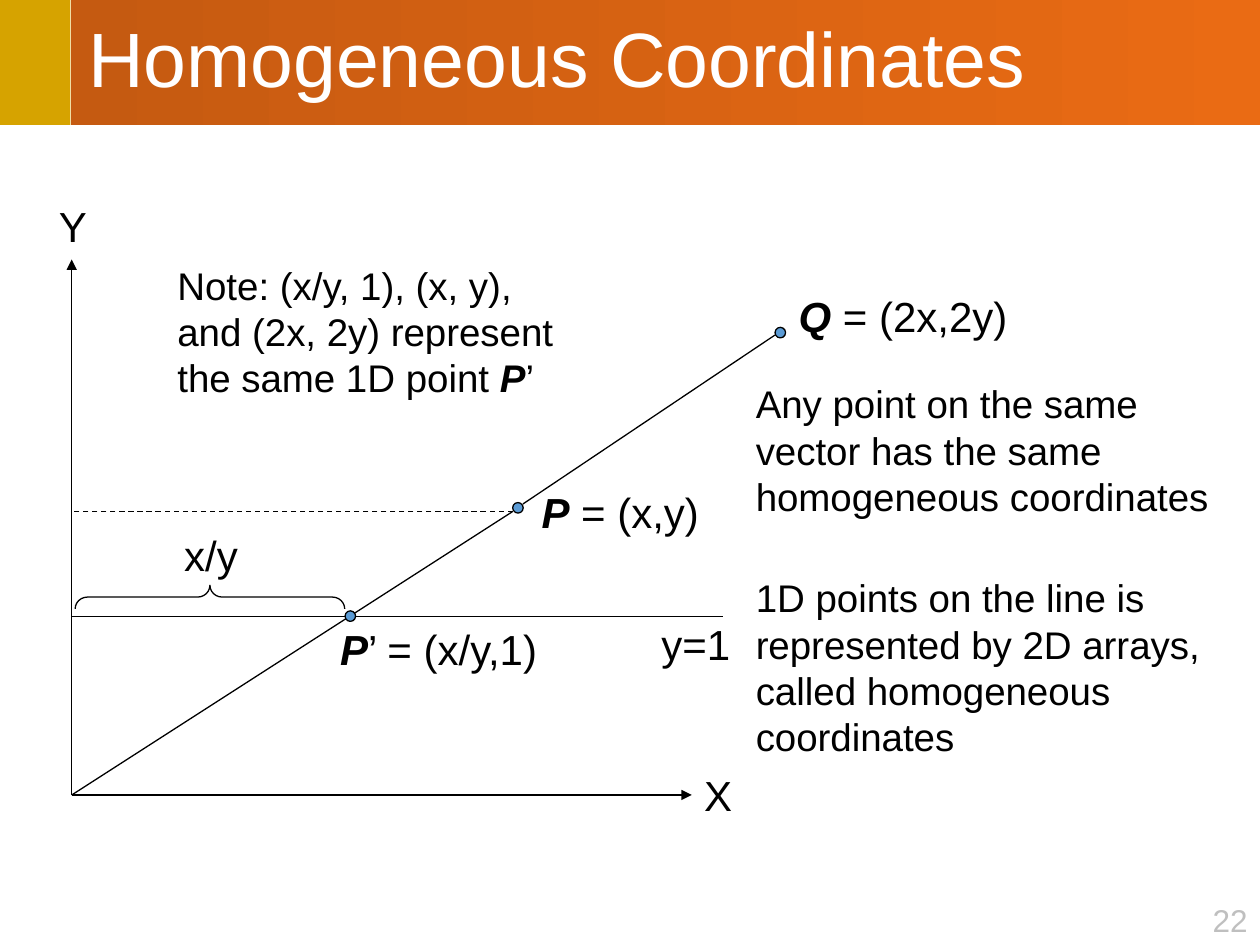
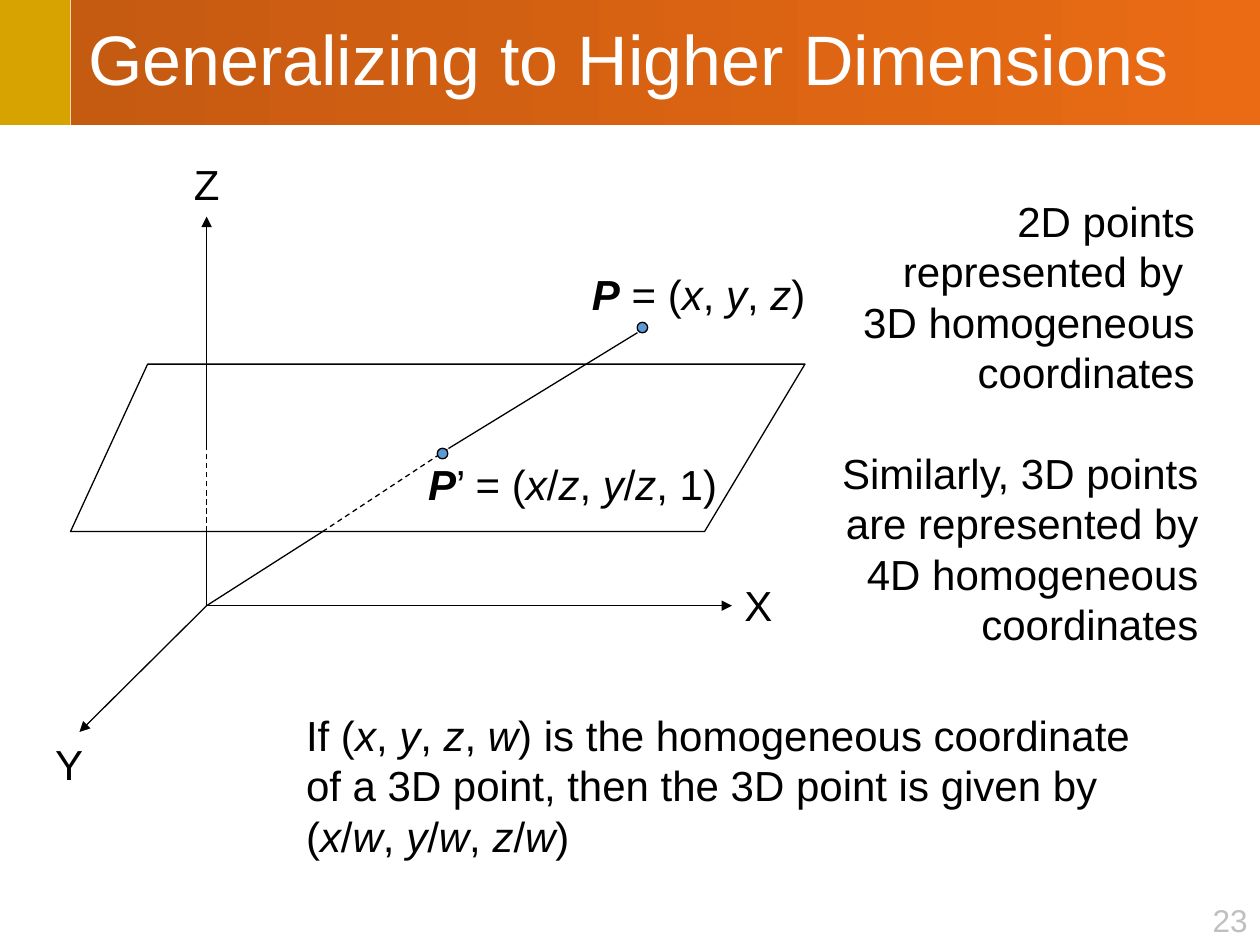
import pptx
import pptx.dml.color
import pptx.enum.dml
import pptx.enum.shapes
import pptx.enum.text
import pptx.oxml
import pptx.util

Pt = pptx.util.Pt
ALIGN = pptx.enum.text.PP_ALIGN
SHAPE = pptx.enum.shapes.MSO_SHAPE

FONT = "Arial"
COLORS = {
    "ink": "000000",
    "title": "FFFFFF",
    "corner": "D6A300",
    "band_start": "C55A11",
    "band_end": "EA6B14",
    "point": "5B9BD5",
    "number": "BFBFBF",
}
PAGE_WIDTH, PAGE_HEIGHT = 720, 540
BAND_LEFT, BAND_HEIGHT = 40.3, 71.4
LINE_WIDTH = 0.75
POINT_SIZE = 6
LABEL_HEIGHT = 36


def color(name):
    return pptx.dml.color.RGBColor.from_string(COLORS[name])


def style_font(font, size, color_name, bold=False, italic=False):
    font.name, font.size = FONT, Pt(size)
    font.bold, font.italic = bold, italic
    font.color.rgb = color(color_name)


def style_outline(shape, fill=None):
    """Thin black outline, with a plain fill or none."""
    shape.shadow.inherit = False
    shape.line.color.rgb = color("ink")
    shape.line.width = Pt(LINE_WIDTH)
    if fill:
        shape.fill.solid()
        shape.fill.fore_color.rgb = color(fill)
    else:
        shape.fill.background()


def add_text(page, text, left, top, width, height=LABEL_HEIGHT, *, size=24,
             align=ALIGN.LEFT, wrap=False, color_name="ink"):
    """Symbols stand between asterisks: italic, and bold too for capital vectors."""
    box = page.shapes.add_textbox(Pt(left), Pt(top), Pt(width), Pt(height))
    frame = box.text_frame
    frame.word_wrap = wrap
    frame.auto_size = pptx.enum.text.MSO_AUTO_SIZE.SHAPE_TO_FIT_TEXT
    para = frame.paragraphs[0]
    para.alignment = align
    for line_index, line in enumerate(text.split("\n")):
        if line_index:
            para.add_line_break()
        for index, part in enumerate(line.split("*")):
            if part:
                symbol = index % 2 == 1
                span = para.add_run()
                span.text = part
                style_font(span.font, size, color_name,
                           bold=symbol and part.isupper(), italic=symbol)


def add_line(page, start, end, *, dashed=False, arrow=False):
    line = page.shapes.add_connector(
        pptx.enum.shapes.MSO_CONNECTOR.STRAIGHT,
        *(Pt(value) for value in (*start, *end)))
    line.line.color.rgb = color("ink")
    line.line.width = Pt(LINE_WIDTH)
    if dashed:
        line.line.dash_style = pptx.enum.dml.MSO_LINE.DASH
    namespace = pptx.oxml.ns.nsdecls("a")
    if arrow:
        line.line._get_or_add_ln().append(
            pptx.oxml.parse_xml(f'<a:tailEnd {namespace} type="triangle"/>'))
    line._element.spPr.append(pptx.oxml.parse_xml(f"<a:effectLst {namespace}/>"))


def add_point(page, center_x, center_y):
    dot = page.shapes.add_shape(
        SHAPE.OVAL, Pt(center_x - POINT_SIZE / 2), Pt(center_y - POINT_SIZE / 2),
        Pt(POINT_SIZE), Pt(POINT_SIZE))
    style_outline(dot, "point")


def add_brace(page, left, top, width, height):
    """Left brace turned to open downwards; the box is given before turning."""
    brace = page.shapes.add_shape(
        SHAPE.LEFT_BRACE, Pt(left), Pt(top), Pt(width), Pt(height))
    brace.rotation = 90
    brace.adjustments[0] = 0.52
    style_outline(brace)


def add_plane(page, corners):
    corners = [(Pt(x), Pt(y)) for x, y in corners]
    builder = page.shapes.build_freeform(*corners[0])
    builder.add_line_segments(corners[1:], close=True)
    style_outline(builder.convert_to_shape())


def add_page(deck, title, number, title_size):
    """Page with the corner block, the gradient title band and the number."""
    page = deck.slides.add_slide(deck.slide_layouts[5])
    corner = page.shapes.add_shape(SHAPE.RECTANGLE, 0, 0, Pt(BAND_LEFT), Pt(BAND_HEIGHT))
    corner.shadow.inherit = False
    corner.fill.solid()
    corner.fill.fore_color.rgb = color("corner")
    corner.line.fill.background()

    band = page.shapes.title
    band.left, band.top = Pt(BAND_LEFT), Pt(0)
    band.width, band.height = Pt(PAGE_WIDTH - BAND_LEFT), Pt(BAND_HEIGHT)
    band.fill.gradient()
    band.fill.gradient_angle = 0
    for stop, name in zip(band.fill.gradient_stops, ("band_start", "band_end")):
        stop.color.rgb = color(name)
    frame = band.text_frame
    frame.text = title
    frame.margin_left = Pt(10)
    frame.word_wrap = True
    frame.auto_size = pptx.enum.text.MSO_AUTO_SIZE.NONE
    frame.vertical_anchor = pptx.enum.text.MSO_ANCHOR.MIDDLE
    para = frame.paragraphs[0]
    para.alignment = ALIGN.LEFT
    para.line_spacing = 0.9
    style_font(para.runs[0].font, title_size, "title")

    add_text(page, str(number), 683.3, 511.2, 36.7, 28.8, size=18,
             align=ALIGN.RIGHT, color_name="number")
    return page


def build_homogeneous(deck):
    page = add_page(deck, "Homogeneous Coordinates", 22, 44)
    origin_x, origin_y = origin = (41, 454.3)
    unit_y = 352.1
    vector_end = (293, 292.3)

    # Axes and the line y = 1
    add_line(page, origin, (origin_x, 148.3), arrow=True)
    add_line(page, origin, (395.3, origin_y), arrow=True)
    add_line(page, (origin_x, unit_y), (413.3, unit_y))
    add_text(page, "X", 395.3, 436.3, 31.7)
    add_text(page, "Y", 26.6, 110.9, 31)
    add_text(page, "y=1", 370.8, 349.9, 54)

    # Vector through P', P and Q
    add_line(page, vector_end, origin)
    add_line(page, vector_end, (origin_x, vector_end[1]), dashed=True)
    add_line(page, (298.8, 288), (442.8, 191.5))
    for center in ((200.2, unit_y), (296, 290.2), (445.9, 190.1)):
        add_point(page, *center)
    add_text(page, "*P*’ = (x/y,1)", 187.2, 352.8, 128.2)
    add_text(page, "*P* = (x,y)", 302.4, 274.3, 105.1)
    add_text(page, "*Q* = (2x,2y)", 449.3, 162.7, 134.6)

    # Projected distance
    add_brace(page, 113.2, 264.2, 13.5, 154)
    add_text(page, "x/y", 97.9, 298.8, 45.4, align=ALIGN.CENTER)

    # Remarks
    remarks = (
        ("Note: (x/y, 1), (x, y), and (2x, 2y) represent the same 1D point *P*’",
         94.3, 146.2, 247, 87.1),
        ("Any point on the same vector has the same homogeneous coordinates",
         424.8, 213.8, 288, 87.1),
        ("1D points on the line is represented by 2D arrays, "
         "called homogeneous coordinates", 424.8, 324.7, 288, 113.8),
    )
    for text, *place in remarks:
        add_text(page, text, *place, size=22, wrap=True)


def build_higher_dimensions(deck):
    page = add_page(deck, "Generalizing to Higher Dimensions", 23, 40)
    origin_x, origin_y = origin = (118.1, 346.1)
    plane_top, plane_bottom = 208.1, 303.8
    hidden_top = 256.3
    ray_exit, ray_entry = (184.3, plane_bottom), (256.3, hidden_top)

    # Axes, dashed where the plane hides them
    add_line(page, (origin_x, hidden_top), (origin_x, 123.8), arrow=True)
    add_line(page, origin, (origin_x, plane_bottom))
    add_line(page, (origin_x, plane_bottom), (origin_x, hidden_top), dashed=True)
    add_line(page, origin, (418.3, origin_y), arrow=True)
    add_line(page, origin, (45.4, 418.3), arrow=True)
    add_text(page, "X", 418.3, 327.6, 31.7)
    add_text(page, "Y", 24.5, 418.3, 31)
    add_text(page, "Z", 103.7, 87.1, 29.5)

    # Plane z = 1
    add_plane(page, ((84.4, plane_top), (460, plane_top),
                     (402.6, plane_bottom), (40.3, plane_bottom)))

    # Ray through P' and P
    add_line(page, origin, ray_exit)
    add_line(page, ray_exit, ray_entry, dashed=True)
    add_line(page, ray_entry, (364.3, 190.1))
    add_point(page, 367.1, 187.2)
    add_point(page, 252.9, 259.2)
    add_text(page, "*P*’ = (*x*/*z*, *y*/*z*, 1)", 237.6, 258.5, 185.8)
    add_text(page, "*P* = (*x*, *y*, *z*)", 331.2, 149.8, 136.8)

    # Remarks
    add_text(page, "2D points represented by \n3D homogeneous coordinates",
             482.4, 108, 207.4, 123.8, align=ALIGN.RIGHT, wrap=True)
    add_text(page, "Similarly, 3D points are represented by "
             "4D homogeneous coordinates",
             467.3, 252, 224.6, 123.8, align=ALIGN.RIGHT, wrap=True)
    add_text(page, "If (*x*, *y*, *z*, *w*) is the homogeneous coordinate of a 3D point, "
             "then the 3D point is given by (*x*/*w*, *y*/*w*, *z*/*w*)",
             167.8, 401.8, 494.6, 94.3, wrap=True)


def main():
    deck = pptx.Presentation()
    deck.slide_width, deck.slide_height = Pt(PAGE_WIDTH), Pt(PAGE_HEIGHT)
    build_homogeneous(deck)
    build_higher_dimensions(deck)
    deck.save("out.pptx")


if __name__ == "__main__":
    main()
